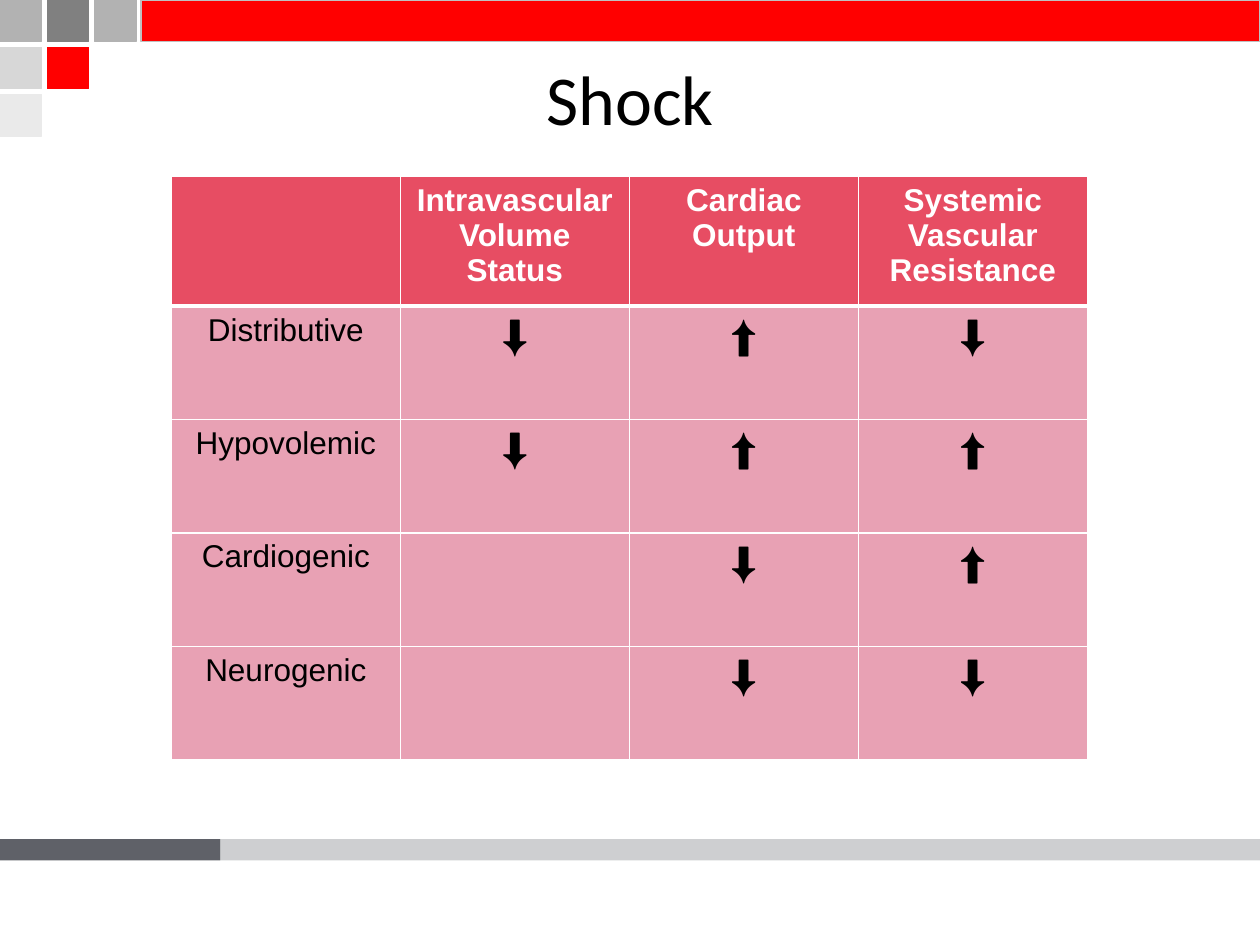
import dataclasses
import lxml.etree
import pptx
import pptx.dml.color
import pptx.enum.shapes
import pptx.enum.text
import pptx.oxml.ns
import pptx.util

Inches = pptx.util.Inches
Pt = pptx.util.Pt
RGBColor = pptx.dml.color.RGBColor
qn = pptx.oxml.ns.qn
ALIGN = pptx.enum.text.PP_ALIGN

RED = RGBColor(0xFF, 0x00, 0x00)
SILVER = RGBColor(0xC0, 0xC0, 0xC0)
ASH = RGBColor(0xB2, 0xB2, 0xB2)
GRAY = RGBColor(0x80, 0x80, 0x80)
PALE = RGBColor(0xD7, 0xD7, 0xD7)
MIST = RGBColor(0xEA, 0xEA, 0xEA)
SLATE = RGBColor(0x5F, 0x61, 0x68)
ROSE = RGBColor(0xE7, 0x4D, 0x63)
PINK = RGBColor(0xE8, 0xA1, 0xB4)
WHITE = RGBColor(0xFF, 0xFF, 0xFF)
BLACK = RGBColor(0x00, 0x00, 0x00)

SIDE = 0.33
STEP = 0.75 / 2
TILES = [[ASH, GRAY, ASH], [PALE, RED], [MIST]]
UP, DOWN = "⬆", "⬇"
ROWS = [
    ["", "Intravascular Volume Status", "Cardiac Output", "Systemic Vascular Resistance"],
    ["Distributive", DOWN, UP, DOWN],
    ["Hypovolemic", DOWN, UP, UP],
    ["Cardiogenic", "", DOWN, UP],
    ["Neurogenic", "", DOWN, DOWN],
]


@dataclasses.dataclass
class Block:
    left: float
    top: float
    width: float
    height: float
    fill: RGBColor
    line: RGBColor | None = None
    alpha: int = 100


def draw_block(slide, block: Block) -> None:
    shape = slide.shapes.add_shape(
        pptx.enum.shapes.MSO_SHAPE.RECTANGLE,
        Inches(block.left), Inches(block.top), Inches(block.width), Inches(block.height))
    shape.shadow.inherit = False
    shape.fill.solid()
    shape.fill.fore_color.rgb = block.fill
    if block.line is None:
        shape.line.fill.background()
    else:
        shape.line.color.rgb = block.line
        shape.line.width = Pt(0.75)
    if block.alpha < 100:
        color = shape.fill._xPr.find(qn("a:solidFill"))[0]
        lxml.etree.SubElement(color, qn("a:alpha"), val=str(block.alpha * 1000))


def add_edge(cell, side: str, width: float) -> None:
    line = lxml.etree.SubElement(cell._tc.get_or_add_tcPr(), qn(f"a:ln{side}"), w=str(Pt(width)))
    fill = lxml.etree.SubElement(line, qn("a:solidFill"))
    lxml.etree.SubElement(fill, qn("a:srgbClr"), val=str(WHITE))


def fill_cell(cell, text: str, row: int) -> None:
    head = row == 0
    cell.margin_left = cell.margin_right = Inches(0.07)
    cell.margin_top = cell.margin_bottom = Inches(0.05)
    for side in "LRTB":
        thick = (head and side == "B") or (row == 1 and side == "T")
        add_edge(cell, side, 3 if thick else 1)
    cell.fill.solid()
    cell.fill.fore_color.rgb = ROSE if head else PINK
    cell.text = text
    para = cell.text_frame.paragraphs[0]
    para.alignment = ALIGN.CENTER
    para.font.name = "Arial"
    para.font.size = Pt(24 if text in (UP, DOWN) else 18)
    para.font.bold = head
    para.font.color.rgb = WHITE if head else BLACK


def draw_table(slide) -> None:
    table = slide.shapes.add_table(
        len(ROWS), len(ROWS[0]), Inches(1.36), Inches(1.4), Inches(7.27), Inches(4.63)).table
    for r, row in enumerate(ROWS):
        table.rows[r].height = Inches(0.9 if r else 1.03)
        for c, text in enumerate(row):
            fill_cell(table.cell(r, c), text, r)


def draw_title(slide) -> None:
    title = slide.shapes.title
    title.left, title.top = Inches(1), Inches(0.38)
    title.width, title.height = Inches(8), Inches(0.78)
    title.text = "Shock"
    title.text_frame.vertical_anchor = pptx.enum.text.MSO_ANCHOR.MIDDLE
    para = title.text_frame.paragraphs[0]
    para.alignment = ALIGN.CENTER
    para.font.name = "Calibri"
    para.font.size = Pt(40)
    para.font.color.rgb = BLACK


def main() -> None:
    deck = pptx.Presentation()
    deck.slide_width, deck.slide_height = Inches(10), Inches(7.5)
    slide = deck.slides.add_slide(deck.slide_layouts[5])
    blocks = [
        Block(c * STEP, r * STEP, SIDE, SIDE, color, color)
        for r, row in enumerate(TILES) for c, color in enumerate(row)
    ]
    blocks += [
        Block(1.12, 0, 8.88, SIDE, RED, SILVER),
        Block(0, 6.66, 1.75, 0.17, SLATE),
        Block(1.75, 6.66, 8.25, 0.17, SLATE, alpha=30),
    ]
    for block in blocks:
        draw_block(slide, block)
    draw_table(slide)
    draw_title(slide)
    deck.save("out.pptx")


if __name__ == "__main__":
    main()
